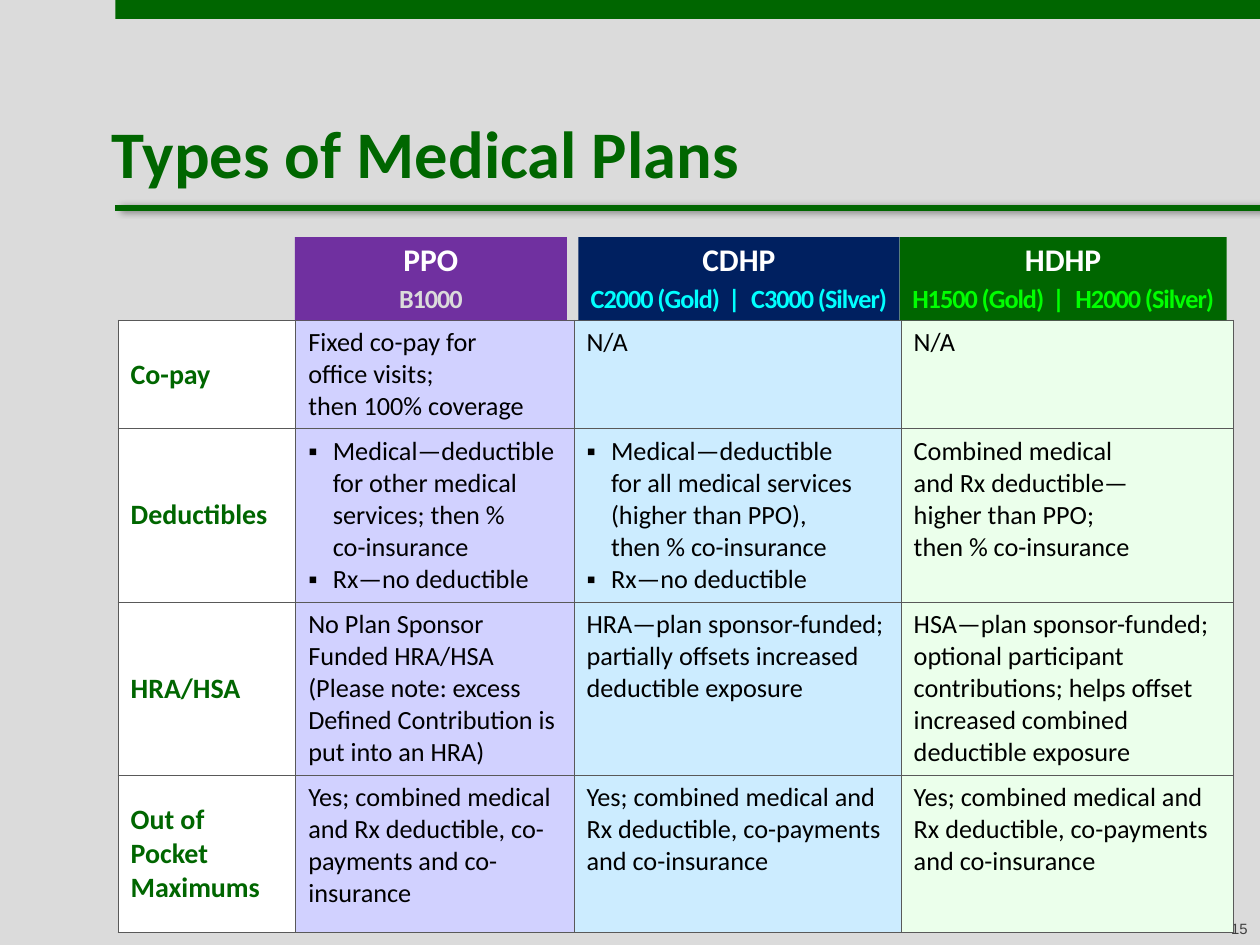
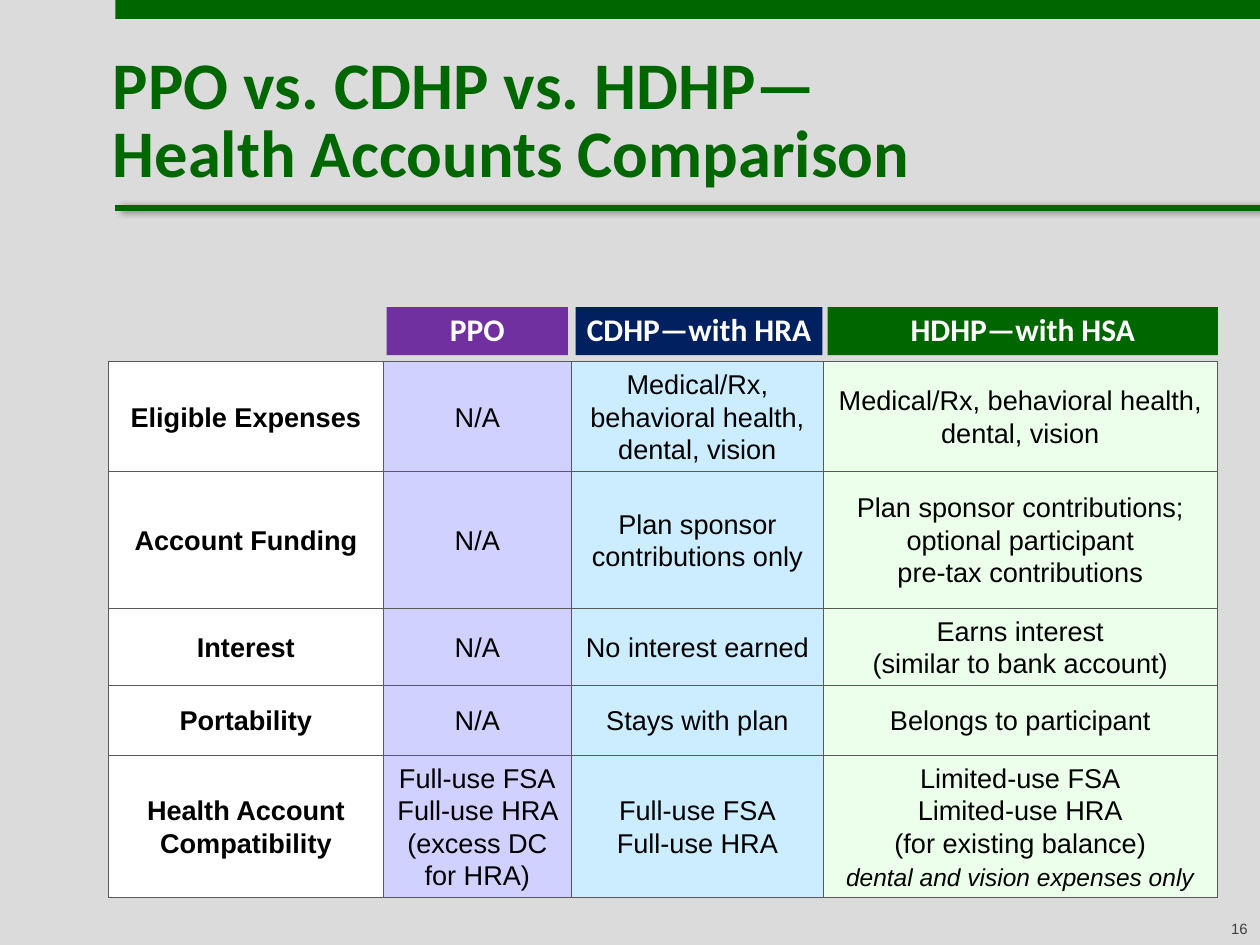
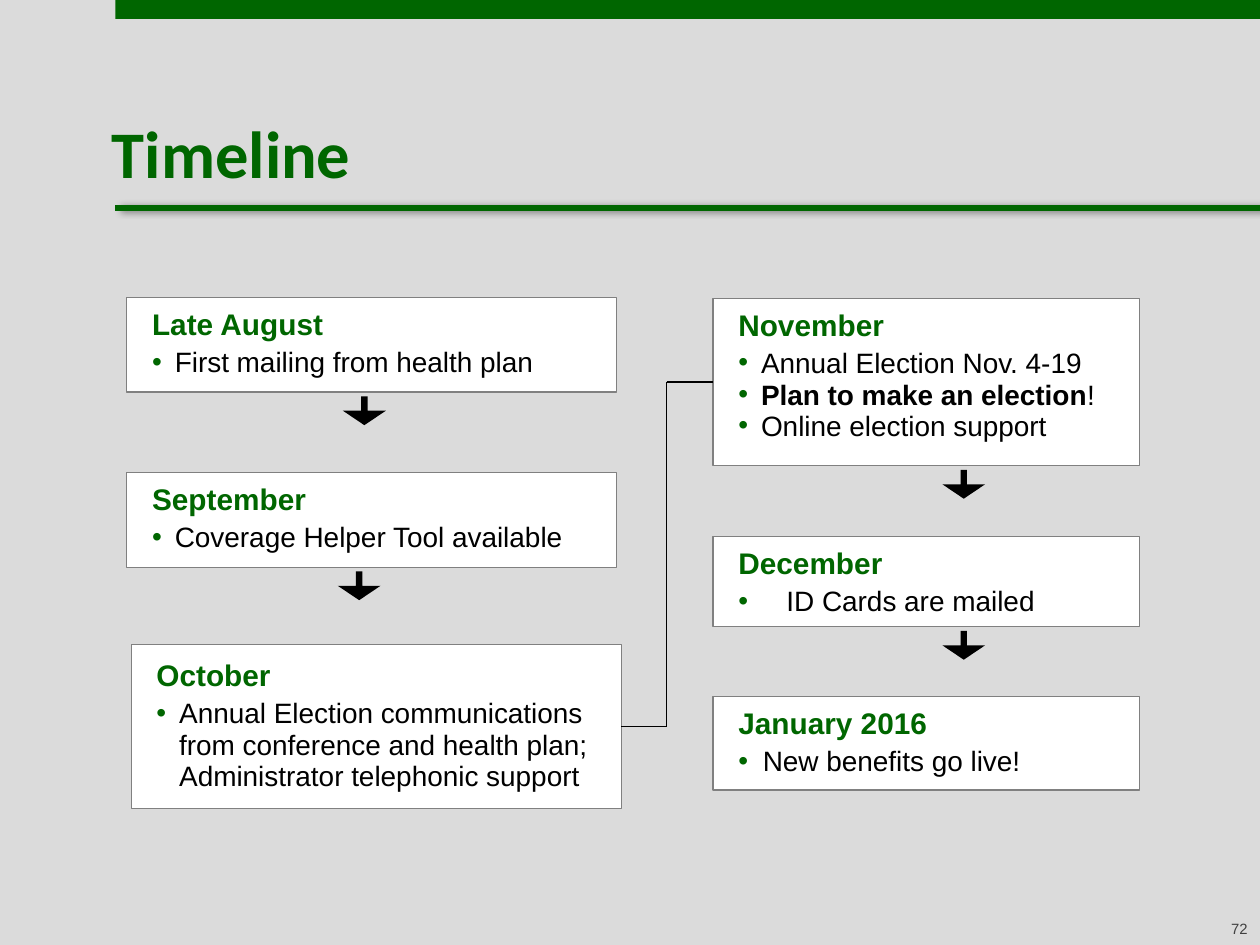
"""Builds three slides on medical plans, health accounts and the election timeline."""
from copy import deepcopy

from lxml import etree
from pptx import Presentation
from pptx.dml.color import RGBColor
from pptx.enum import shapes, text
from pptx.oxml import ns
from pptx.util import Pt

COLORS = {
    "page": "DBDBDB", "green": "006600", "navy": "002060", "purple": "7030A0",
    "lilac": "D1D1FF", "sky": "CCECFF", "mint": "EBFFEB", "white": "FFFFFF",
    "black": "000000", "number": "404040", "border": "595959", "outline": "808080",
    "aqua": "00FFFF", "lime": "00FF00",
}
COLUMN_FILLS = ("white", "lilac", "sky", "mint")
WIDTH, HEIGHT = 720, 540
LEFT = 66
TOP, MIDDLE = text.MSO_ANCHOR.TOP, text.MSO_ANCHOR.MIDDLE
CENTER, RIGHT = text.PP_ALIGN.CENTER, text.PP_ALIGN.RIGHT


def rgb(name):
    """Return a named colour."""
    return RGBColor.from_string(COLORS[name])


def add_xml(parent, tag, **attributes):
    """Append a drawing element to its parent."""
    return etree.SubElement(parent, ns.qn(tag), attributes)


def add_run(para, words, size, color="black", bold=False, italic=False, face="Arial", spacing=0):
    """Add words to a paragraph, turning newlines into line breaks."""
    for index, line in enumerate(words.split("\n")):
        if index:
            para.add_line_break()
            line_break = para._p[-1]
        span = para.add_run()
        span.text = line
        span.font.size, span.font.name = Pt(size), face
        span.font.bold, span.font.italic = bold, italic
        span.font.color.rgb = rgb(color)
        if spacing:
            span._r.get_or_add_rPr().set("spc", str(round(spacing * 100)))
        if index:
            line_break.append(deepcopy(span._r.rPr))
            if not line:
                para._p.remove(span._r)


def add_paragraph(frame, first, align=None, leading=None, after=None):
    """Return the first paragraph of a frame or a new one, with its spacing."""
    para = frame.paragraphs[0] if first else frame.add_paragraph()
    para.alignment = align
    if leading:
        para.line_spacing = Pt(leading)
    if after:
        para.space_after = Pt(after)
    return para


def set_bullet(para, mark, indent, color):
    """Give a paragraph a hanging bullet."""
    props = para._p.get_or_add_pPr()
    props.set("marL", str(Pt(indent)))
    props.set("indent", str(-Pt(indent)))
    add_xml(add_xml(props, "a:buClr"), "a:srgbClr", val=COLORS[color])
    add_xml(props, "a:buFont", typeface="Arial")
    add_xml(props, "a:buChar", char=mark)


def set_frame(frame, margins, anchor=TOP):
    """Set wrapping, anchor and the left, top, right and bottom margins."""
    frame.word_wrap = True
    frame.vertical_anchor = anchor
    frame.margin_left, frame.margin_top, frame.margin_right, frame.margin_bottom = map(Pt, margins)


def add_box(slide, area, fill, line=None, kind=shapes.MSO_SHAPE.RECTANGLE):
    """Add a flat filled shape."""
    box = slide.shapes.add_shape(kind, *map(Pt, area))
    box.shadow.inherit = False
    box.fill.solid()
    box.fill.fore_color.rgb = rgb(fill)
    if line:
        box.line.color.rgb = rgb(line)
        box.line.width = Pt(0.75)
    else:
        box.line.fill.background()
    return box


def add_line(slide, start, end, color, width):
    """Add a straight connector and return it with its empty effect list."""
    line = slide.shapes.add_connector(
        shapes.MSO_CONNECTOR.STRAIGHT, *map(Pt, (*start, *end)))
    line.line.color.rgb = rgb(color)
    line.line.width = Pt(width)
    return line, add_xml(line._element.spPr, "a:effectLst")


def add_textbox(slide, area, margins, anchor=TOP):
    """Add a wrapped text box and return its frame."""
    frame = slide.shapes.add_textbox(*map(Pt, area)).text_frame
    set_frame(frame, margins, anchor)
    return frame


def add_slide(deck, title, title_area, number, leading=None, anchor=TOP):
    """Add a slide with its band, ruled title and page number."""
    slide = deck.slides.add_slide(deck.slide_layouts[6])
    slide.background.fill.solid()
    slide.background.fill.fore_color.rgb = rgb("page")
    add_box(slide, (LEFT, 0, WIDTH - LEFT, 10.8), "green")
    effects = add_line(slide, (LEFT, 119), (WIDTH, 119), "green", 3.5)[1]
    shadow = add_xml(effects, "a:outerShdw", blurRad=str(Pt(4)), dist=str(Pt(3)), dir="0")
    add_xml(add_xml(shadow, "a:srgbClr", val=COLORS["black"]), "a:alpha", val="40000")
    frame = add_textbox(slide, (WIDTH - 60.5, 522, 60.5, 17), (7.2, 3.6, 7.2, 3.6))
    add_run(add_paragraph(frame, True, RIGHT), number, 8.5, "number")
    frame = add_textbox(slide, title_area, (0, 0, 0, 0), anchor)
    add_run(add_paragraph(frame, True, leading=leading), title, 38, "green", True, face="Calibri")
    return slide


def add_header(slide, area, fill, name, options=(), color="white"):
    """Add a plan header, with its options parted by bars."""
    frame = add_box(slide, area, fill).text_frame
    set_frame(frame, (0, 3.6, 0, 3.6))
    add_run(add_paragraph(frame, True, CENTER, 20), name, 18, "white", True, face="Calibri")
    if options:
        para = add_paragraph(frame, False, CENTER, 20)
        for index, option in enumerate(options):
            if index:
                add_run(para, " | ", 15, color, True, face="Calibri", spacing=1.3)
            add_run(para, option, 15, color, True, face="Calibri", spacing=-0.6)


def set_borders(cell):
    """Draw a thin line on every side of a cell."""
    props = cell._tc.get_or_add_tcPr()
    for place, side in enumerate(("a:lnL", "a:lnR", "a:lnT", "a:lnB")):
        edge = etree.Element(ns.qn(side), w=str(Pt(0.5)))
        add_xml(add_xml(edge, "a:solidFill"), "a:srgbClr", val=COLORS["border"])
        props.insert(place, edge)


def add_plan_table(slide, corner, widths, heights, rows, label, body, align=None, leading=None,
                   anchor=TOP):
    """Add a table; a cell is a string, a tuple of paragraphs or a list of bullets."""
    table = slide.shapes.add_table(
        len(rows), len(widths), *map(Pt, (*corner, sum(widths), sum(heights)))).table
    table.first_row = table.horz_banding = False
    for column, width in zip(table.columns, widths):
        column.width = Pt(width)
    for r, (height, row) in enumerate(zip(heights, rows)):
        table.rows[r].height = Pt(height)
        for c, content in enumerate(row):
            cell = table.cell(r, c)
            cell.fill.solid()
            cell.fill.fore_color.rgb = rgb(COLUMN_FILLS[c])
            cell.vertical_anchor = anchor if c else MIDDLE
            set_borders(cell)
            lines = (content,) if isinstance(content, str) else content
            for index, words in enumerate(lines):
                para = add_paragraph(cell.text_frame, index == 0, align, leading)
                if isinstance(content, list):
                    set_bullet(para, "▪", 14, "black")
                add_run(para, words, **(body if c else label))
    return table


def add_plans_slide(deck):
    """Add the slide that compares the types of plan."""
    slide = add_slide(deck, "Types of Medical Plans", (64, 64, 656, 42.5), "15")
    maximum = "Yes; combined medical and Rx deductible, co-payments and co-insurance"
    rows = [
        ("Co-pay", "Fixed co-pay for\noffice visits;\nthen 100% coverage", "N/A", "N/A"),
        ("Deductibles",
         ["Medical—deductible for other medical services; then %\nco-insurance",
          "Rx—no deductible"],
         ["Medical—deductible\nfor all medical services (higher than PPO),\nthen % co-insurance",
          "Rx—no deductible"],
         "Combined medical\nand Rx deductible—\nhigher than PPO;\nthen % co-insurance"),
        ("HRA/HSA",
         ("No Plan Sponsor Funded HRA/HSA",
          "(Please note: excess Defined Contribution is put into an HRA)"),
         "HRA—plan sponsor-funded; partially offsets increased deductible exposure",
         "HSA—plan sponsor-funded; optional participant contributions; "
         "helps offset increased combined deductible exposure"),
        ("Out of Pocket Maximums", maximum, maximum, maximum),
    ]
    add_plan_table(slide, (67.5, 183), (101.5, 159, 187, 190), (62, 99, 99, 90), rows,
                   {"size": 16, "color": "green", "bold": True, "face": "Calibri"},
                   {"size": 15, "face": "Calibri"})
    headers = [
        (514, 187, "green", "HDHP", ("H1500 (Gold)", "H2000 (Silver)"), "lime"),
        (330.5, 183.5, "navy", "CDHP", ("C2000 (Gold)", "C3000 (Silver)"), "aqua"),
        (168.5, 155.5, "purple", "PPO", ("B1000",), "page"),
    ]
    for left, width, *content in headers:
        add_header(slide, (left, 135.5, width, 47.5), *content)


def add_accounts_slide(deck):
    """Add the slide that compares the health accounts."""
    slide = add_slide(deck, "PPO vs. CDHP vs. HDHP—\nHealth Accounts Comparison",
                      (64.5, 27, 629, 86), "16", 39, MIDDLE)
    rows = [
        ("Eligible Expenses", "N/A", "Medical/Rx, behavioral health, dental, vision",
         "Medical/Rx, behavioral health, dental, vision"),
        ("Account Funding", "N/A", "Plan sponsor contributions only",
         "Plan sponsor contributions; optional participant\npre-tax contributions"),
        ("Interest", "N/A", "No interest earned",
         "Earns interest\n(similar to bank account)"),
        ("Portability", "N/A", "Stays with plan", "Belongs to participant"),
        ("Health Account Compatibility",
         ("Full-use FSA", "Full-use HRA (excess DC for HRA)"),
         ("Full-use FSA", "Full-use HRA"),
         ("Limited-use FSA", "Limited-use HRA", "(for existing balance)")),
    ]
    table = add_plan_table(slide, (62, 206.5), (157, 107.5, 144, 225), (63, 78, 44, 40, 81), rows,
                           {"size": 15.5, "bold": True}, {"size": 15.5},
                           CENTER, 18.5, MIDDLE)
    balance = table.cell(4, 3)
    balance.margin_left = balance.margin_right = 0
    add_run(balance.text_frame.paragraphs[-1], "\ndental and vision expenses only", 14, italic=True)
    headers = [
        (221, 103.5, "purple", "PPO"),
        (329, 141, "navy", "CDHP—with HRA"),
        (473, 223, "green", "HDHP—with HSA"),
    ]
    for left, width, fill, name in headers:
        add_header(slide, (left, 175.5, width, 27.5), fill, name)


def add_step(slide, area, month, items, indent=13, anchor=TOP):
    """Add a month box; an item is a string, or a bold part and its plain end."""
    box = add_box(slide, area, "white", "outline")
    set_frame(box.text_frame, (14.4, 7.2, 7.2, 7.2), anchor)
    heading = add_paragraph(box.text_frame, True, text.PP_ALIGN.LEFT, 18, 3)
    add_run(heading, month, 17, "green", True)
    for item in items:
        para = add_paragraph(box.text_frame, False, text.PP_ALIGN.LEFT, 18)
        set_bullet(para, "•", indent, "green")
        strong, plain = ("", item) if isinstance(item, str) else item
        if strong:
            add_run(para, strong, 16, bold=True)
        add_run(para, plain, 16)
    return box


def add_timeline_slide(deck):
    """Add the timeline of months, arrows and the link between its columns."""
    slide = add_slide(deck, "Timeline", (64, 64, 656, 42.5), "72")
    left, right, wide, narrow = 72.5, 407.5, 280, 243.5
    add_step(slide, (left, 170, wide, 54), "Late August", ["First mailing from health plan"])
    add_step(slide, (left, 270, wide, 54.5), "September", ["Coverage Helper Tool available"])
    october = add_step(
        slide, (75, 368.5, wide, 93.5), "October",
        ["Annual Election communications from conference and health plan; "
         "Administrator telephonic support"], anchor=MIDDLE)
    november = add_step(
        slide, (right, 170.5, narrow, 95.5), "November",
        ["Annual Election Nov. 4-19", ("Plan to make an election", "!"),
         "Online election support"])
    add_step(slide, (right, 306.5, narrow, 51.5), "December", ["ID Cards are mailed"], 27.5)
    add_step(slide, (right, 398, narrow, 53.5), "January 2016", ["New benefits go live!"], 14)
    for x, y in ((196, 226.5), (193, 326.5), (538.5, 268.5), (538.5, 360.5)):
        arrow = add_box(slide, (x, y, 24.5, 16.5), "black", kind=shapes.MSO_SHAPE.DOWN_ARROW)
        arrow.adjustments[0], arrow.adjustments[1] = 0.15, 0.5
    spine = 381
    low = (october.top + october.height / 2) / Pt(1)
    high = (november.top + november.height / 2) / Pt(1)
    add_line(slide, (spine, low), (spine, high), "black", 0.75)
    leaving = add_line(slide, (355, low), (spine, low), "black", 0.75)[0]
    leaving.begin_connect(october, 3)
    arriving = add_line(slide, (spine, high), (right, high), "black", 0.75)[0]
    arriving.end_connect(november, 1)


def main():
    """Build and save the deck."""
    deck = Presentation()
    deck.slide_width, deck.slide_height = Pt(WIDTH), Pt(HEIGHT)
    add_plans_slide(deck)
    add_accounts_slide(deck)
    add_timeline_slide(deck)
    deck.save("out.pptx")


if __name__ == "__main__":
    main()
